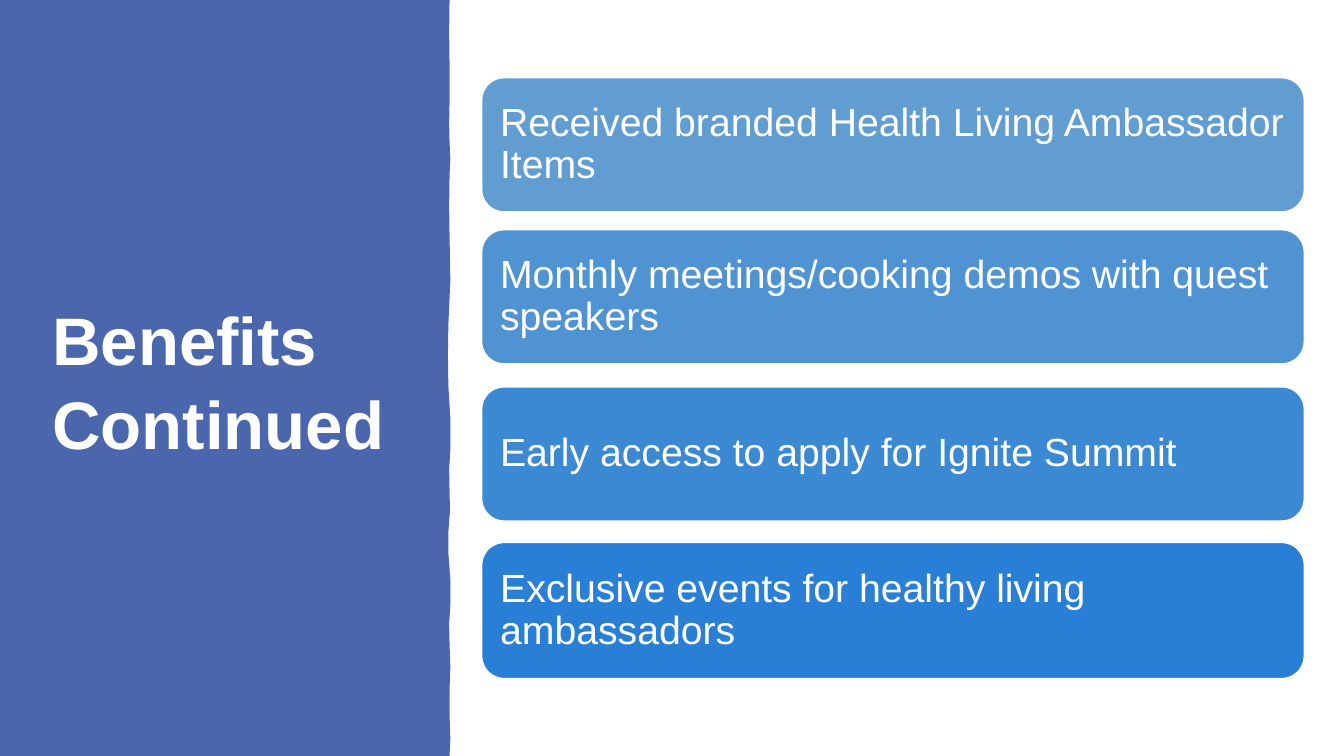
from pptx import Presentation
from pptx.dml.color import RGBColor
from pptx.enum.shapes import MSO_SHAPE
from pptx.enum.text import MSO_ANCHOR, PP_ALIGN
from pptx.util import Cm, Pt

COLORS = {"panel": "4A66AC", "white": "FFFFFF"}
FONT = "Arial"
SLIDE_WIDTH, SLIDE_HEIGHT = 33.87, 19.05

# Wavy right edge of the panel: x and y in centimetres, from top to bottom
PANEL_EDGE = [
    (11.33, 0), (11.32, 0.8), (11.33, 1.6), (11.33, 2.59), (11.32, 3.08),
    (11.33, 3.58), (11.35, 4.01), (11.33, 4.42), (11.32, 5.18), (11.33, 5.92),
    (11.35, 7.06), (11.3, 8.18), (11.29, 8.94), (11.3, 9.73), (11.35, 10.54),
    (11.35, 11.33), (11.32, 11.84), (11.33, 12.34), (11.34, 12.88), (11.3, 13.41),
    (11.3, 13.94), (11.35, 14.6), (11.35, 15.24), (11.32, 15.72), (11.33, 16.23),
    (11.35, 16.81), (11.33, 17.4), (11.33, 18.01), (11.35, 18.62), (11.33, 19.05),
]

# Each benefit: offset from the top of the list, height, fill, wording
BENEFITS = [
    (0, 3.38, "629DD1", "Received branded Health Living Ambassador Items"),
    (3.83, 3.38, "5093D2", "Monthly meetings/cooking demos with quest speakers"),
    (7.79, 3.38, "3C89D3", "Early access to apply for Ignite Summit"),
    (11.71, 3.43, "297FD5", "Exclusive events for healthy living ambassadors"),
]


def paint(shape, fill):
    shape.shadow.inherit = False
    shape.fill.solid()
    shape.fill.fore_color.rgb = RGBColor.from_string(fill)


def write(shape, text, size, line_spacing, bold=False):
    frame = shape.text_frame
    frame.word_wrap = True
    frame.vertical_anchor = MSO_ANCHOR.MIDDLE
    paragraph = frame.paragraphs[0]
    paragraph.alignment = PP_ALIGN.LEFT
    paragraph.line_spacing = line_spacing
    run = paragraph.add_run()
    run.text = text
    run.font.name = FONT
    run.font.size = Pt(size)
    run.font.bold = bold
    run.font.color.rgb = RGBColor.from_string(COLORS["white"])


def add_title_panel(slide, left, top, height):
    # Panel with the wavy edge
    builder = slide.shapes.build_freeform(Cm(left), Cm(top))
    points = PANEL_EDGE + [(0, height)]
    builder.add_line_segments([(Cm(left + x), Cm(top + y)) for x, y in points], close=True)
    panel = builder.convert_to_shape()
    paint(panel, COLORS["panel"])
    panel.line.fill.background()

    # Title
    title = slide.shapes.add_textbox(Cm(left + 1.07), Cm(top + 1.78), Cm(9.32), Cm(15.52))
    write(title, "Benefits Continued", 48, 1.05, bold=True)


def add_benefit_list(slide, left, top, width):
    for offset, height, fill, text in BENEFITS:
        card = slide.shapes.add_shape(
            MSO_SHAPE.ROUNDED_RECTANGLE, Cm(left), Cm(top + offset), Cm(width), Cm(height))
        paint(card, fill)
        card.line.color.rgb = RGBColor.from_string(COLORS["white"])
        card.line.width = Pt(1)
        frame = card.text_frame
        frame.margin_left = frame.margin_right = Cm(0.3)
        frame.margin_top = frame.margin_bottom = Cm(0.3)
        write(card, text, 28, 0.9)


def main():
    presentation = Presentation()
    presentation.slide_width = Cm(SLIDE_WIDTH)
    presentation.slide_height = Cm(SLIDE_HEIGHT)
    slide = presentation.slides.add_slide(presentation.slide_layouts[6])
    add_title_panel(slide, 0, 0, SLIDE_HEIGHT)
    add_benefit_list(slide, 12.14, 1.96, 20.73)
    presentation.save("out.pptx")


if __name__ == "__main__":
    main()
